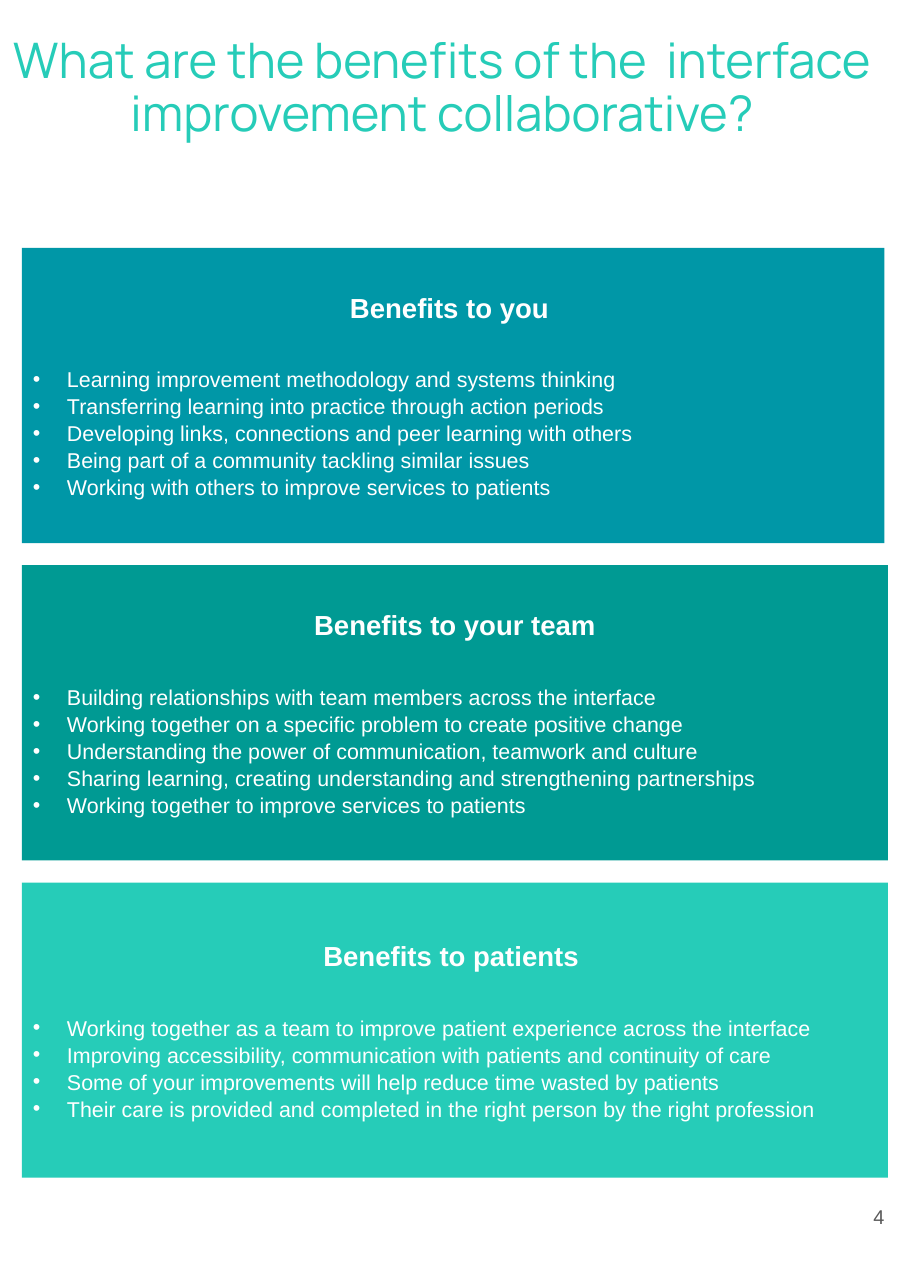
"""Build the portrait page on the benefits of the interface improvement collaborative."""
from lxml import etree
from pptx import Presentation
from pptx import util as u
from pptx.dml.color import RGBColor
from pptx.enum import shapes, text
from pptx.oxml import ns

WHITE = RGBColor(0xFF, 0xFF, 0xFF)
GREY = RGBColor(0x59, 0x59, 0x59)
BLUE = RGBColor(0x00, 0x97, 0xA7)
GREEN = RGBColor(0x00, 0x9A, 0x93)
TURQUOISE = RGBColor(0x26, 0xCC, 0xB8)

TITLE = "What are the benefits of the  interface improvement collaborative?"
PAGE_NUMBER = "4"
PANELS = [
    ("Benefits to you ", BLUE, 783, text.PP_ALIGN.JUSTIFY, [
        "Learning improvement methodology and systems thinking ",
        "Transferring learning into practice through action periods ",
        "Developing links, connections and peer learning with others ",
        "Being part of a community tackling similar issues ",
        "Working with others to improve services to patients ",
    ]),
    ("Benefits to your team", GREEN, 786, text.PP_ALIGN.LEFT, [
        "Building relationships with team members across the interface",
        "Working together on a specific problem to create positive change",
        "Understanding the power of communication, teamwork and culture",
        "Sharing learning, creating understanding and strengthening partnerships",
        "Working together to improve services to patients",
    ]),
    ("Benefits to patients ", TURQUOISE, 786, text.PP_ALIGN.LEFT, [
        "Working together as a team to improve patient experience across the interface",
        "Improving accessibility, communication with patients and continuity of care",
        "Some of your improvements will help reduce time wasted by patients",
        "Their care is provided and completed in the right person by the right profession",
    ]),
]
PANEL_LEFT, PANEL_TOP, PANEL_HEIGHT, PANEL_GAP = 20, 225, 268, 20
BULLET_INDENT = 31


def px(length):
    """Turn px into EMU at 100 px to the inch."""
    return u.Emu(length * 9144)


def place(shape, left, top, width, height):
    """Set the position and size of a shape in px."""
    shape.left, shape.top = px(left), px(top)
    shape.width, shape.height = px(width), px(height)


def format_frame(frame, inset, anchor):
    """Set equal insets, wrapping and vertical anchor."""
    frame.margin_left = frame.margin_right = px(inset)
    frame.margin_top = frame.margin_bottom = px(inset)
    frame.word_wrap = True
    frame.auto_size = text.MSO_AUTO_SIZE.NONE
    frame.vertical_anchor = anchor


def write(para, words, size, color, align, name="Arial", bold=False):
    """Fill a paragraph and format its runs."""
    para.text = words
    para.alignment = align
    for span in para.runs:
        span.font.name, span.font.size = name, u.Pt(size)
        span.font.bold, span.font.color.rgb = bold, color


def add_bullet(para):
    """Give a paragraph a hanging white bullet."""
    props = para._p.get_or_add_pPr()
    props.set("marL", str(px(BULLET_INDENT)))
    props.set("indent", str(-px(BULLET_INDENT)))
    color = etree.SubElement(props, ns.qn("a:buClr"))
    etree.SubElement(color, ns.qn("a:srgbClr"), val=str(WHITE))
    etree.SubElement(props, ns.qn("a:buFont"), typeface="Arial")
    etree.SubElement(props, ns.qn("a:buChar"), char="•")


def add_panel(page, top, heading, fill, width, align, benefits):
    """Draw one coloured panel with its heading and bullets."""
    box = page.shapes.add_shape(shapes.MSO_SHAPE.RECTANGLE, 0, 0, 0, 0)
    place(box, PANEL_LEFT, top, width, PANEL_HEIGHT)
    box.shadow.inherit = False
    box.fill.solid()
    box.fill.fore_color.rgb = fill
    box.line.fill.background()
    frame = box.text_frame
    format_frame(frame, 10, text.MSO_ANCHOR.MIDDLE)
    para = frame.paragraphs[0]
    write(para, heading, 18, WHITE, text.PP_ALIGN.CENTER, bold=True)
    para.space_after = u.Pt(27)
    for benefit in benefits:
        para = frame.add_paragraph()
        write(para, benefit, 14, WHITE, align)
        para.line_spacing = 1.05
        add_bullet(para)


def main():
    """Create the deck and save it."""
    deck = Presentation()
    deck.slide_width, deck.slide_height = px(827), px(1169)
    page = deck.slides.add_slide(deck.slide_layouts[5])

    title = page.shapes.title
    place(title, 0, 23, 803, 182)
    format_frame(title.text_frame, 10, text.MSO_ANCHOR.TOP)
    para = title.text_frame.paragraphs[0]
    write(para, TITLE, 32, TURQUOISE, text.PP_ALIGN.CENTER, name="Manrope")
    para.line_spacing = 0.9

    for index, panel in enumerate(PANELS):
        add_panel(page, PANEL_TOP + index * (PANEL_HEIGHT + PANEL_GAP), *panel)

    number = page.shapes.add_textbox(0, 0, 0, 0)
    place(number, 766, 1060, 50, 89)
    format_frame(number.text_frame, 13, text.MSO_ANCHOR.MIDDLE)
    write(number.text_frame.paragraphs[0], PAGE_NUMBER, 13, GREY, text.PP_ALIGN.RIGHT)

    deck.save("out.pptx")


if __name__ == "__main__":
    main()
